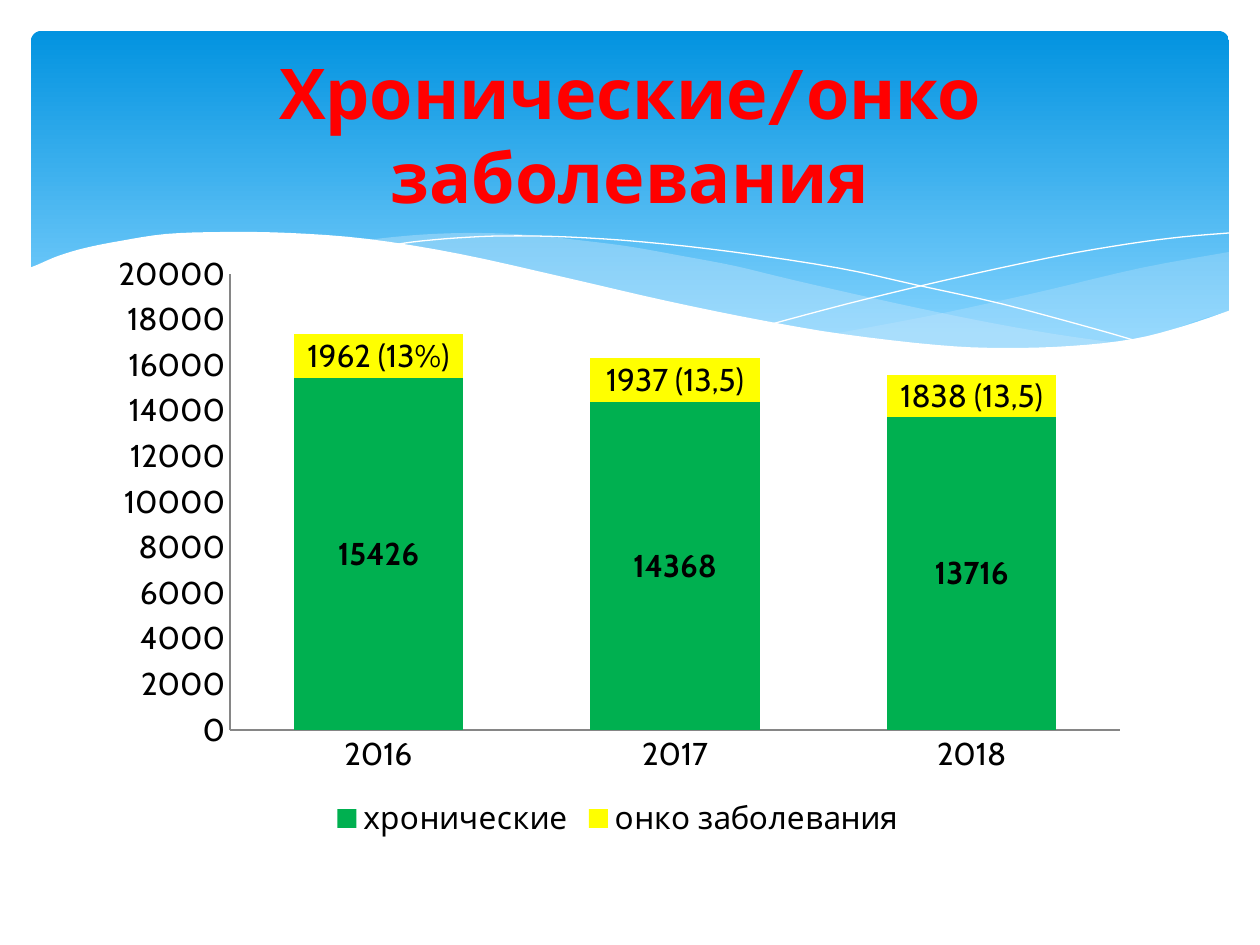
from lxml.etree import SubElement
from pptx import Presentation
from pptx.chart.data import CategoryChartData
from pptx.dml.color import RGBColor
from pptx.enum.chart import XL_CHART_TYPE as ChartType, XL_LABEL_POSITION as LabelPos
from pptx.enum.chart import XL_LEGEND_POSITION as LegendPos, XL_TICK_MARK as Tick
from pptx.enum.shapes import MSO_SHAPE as Shape
from pptx.enum.text import MSO_ANCHOR as Anchor, PP_ALIGN as Align
from pptx.oxml.ns import qn
from pptx.util import Pt

PX = 914400 / 126
FONT = "Cabin"

RIGHT_WAVE = [
    [(1229, 252), (1141, 268), (1048, 290), (981, 305), (919, 318), (833, 334)],
    [(833, 334), (906, 342), (969, 348), (1026, 350), (1076, 348), (1120, 343),
     (1160, 334), (1196, 321), (1229, 311)],
]
LONG_WAVE = [
    [(1125, 344), (1054, 334), (976, 320), (890, 302), (793, 280), (735, 266),
     (682, 256), (632, 247), (586, 241), (529, 235), (479, 233), (433, 234),
     (394, 237), (360, 241)],
    [(360, 241), (431, 251), (509, 266), (566, 280), (668, 302), (757, 321),
     (838, 335), (910, 345), (974, 350), (1031, 350), (1080, 348), (1125, 344)],
]
FALLING_LINE = [
    [(389, 246), (413, 242), (457, 238), (505, 236), (567, 237), (643, 242),
     (733, 252), (838, 268), (916, 285), (1002, 304), (1095, 329), (1143, 343)],
]
RISING_LINE = [
    [(772, 324), (847, 304), (942, 281), (1053, 257), (1128, 244), (1182, 237),
     (1229, 233)],
]
WHITE_WAVE = [
    [(1231, 310), (1184, 326), (1133, 339), (1071, 346), (1002, 348), (937, 345),
     (842, 334), (760, 320), (667, 301), (563, 277), (460, 254), (368, 239),
     (290, 233), (223, 232), (166, 234), (120, 241), (85, 248), (58, 256),
     (37, 265), (29, 268)],
    [(29, 415), (1231, 415)],
]


def emu(*lengths):
    """Turn px lengths into EMU."""
    return [round(length * PX) for length in lengths]


def color(hex_value):
    """Turn a hex string into a colour."""
    return RGBColor.from_string(hex_value)


def style_font(font, hex_value="000000", **formats):
    """Apply the shared font and any format values."""
    for name, value in {"name": FONT, "size": Pt(18), "bold": False, **formats}.items():
        setattr(font, name, value)
    font.color.rgb = color(hex_value)


def smooth_curve(knots, steps=4):
    """Return points of a Catmull-Rom curve through the knots."""
    ends = [knots[0], *knots, knots[-1]]
    points = [knots[0]]
    for a, b, c, d in zip(ends, ends[1:], ends[2:], ends[3:]):
        for step in range(1, steps + 1):
            t = step / steps
            points.append(tuple(
                (2 * q + (r - p) * t + (2 * p - 5 * q + 4 * r - s) * t ** 2
                 + (3 * q - p - 3 * r + s) * t ** 3) / 2
                for p, q, r, s in zip(a, b, c, d)))
    return points


def add_wave(slide, origin, edges, fill=None, alpha=100):
    """Draw a filled wave, or an open white line when there is no fill."""
    left, top = origin
    points = [emu(left + x, top + y) for edge in edges for x, y in smooth_curve(edge)]
    builder = slide.shapes.build_freeform(*points[0])
    builder.add_line_segments(points[1:], close=fill is not None)
    wave = builder.convert_to_shape()
    wave.shadow.inherit = False
    if fill is None:
        wave.fill.background()
        wave.line.color.rgb = color("FFFFFF")
        wave.line.width = 0
        return
    wave.line.fill.background()
    wave.fill.solid()
    wave.fill.fore_color.rgb = color(fill)
    if alpha < 100:
        tone = wave.fill._xPr.find(".//" + qn("a:srgbClr"))
        SubElement(tone, qn("a:alpha")).set("val", str(alpha * 1000))


def add_banner(slide, box):
    """Place the blue panel and its waves."""
    left, top, width, height = box
    panel = slide.shapes.add_shape(
        Shape.ROUNDED_RECTANGLE, *emu(left + 31, top + 31, width - 62, height - 75))
    panel.adjustments[0] = 0.03
    panel.shadow.inherit = False
    panel.line.fill.background()
    panel.fill.gradient()
    panel.fill.gradient_angle = 270
    for stop, (position, tone) in zip(panel.fill.gradient_stops,
                                      [(0, "0293E0"), (0.9, "83D3FE")]):
        stop.position = position
        stop.color.rgb = color(tone)
    origin = left, top
    add_wave(slide, origin, RIGHT_WAVE, "C6E7FC", 29)
    add_wave(slide, origin, LONG_WAVE, "C6E7FC", 40)
    add_wave(slide, origin, FALLING_LINE)
    add_wave(slide, origin, RISING_LINE)
    add_wave(slide, origin, WHITE_WAVE, "FFFFFF")


def set_plot_layout(chart, **fractions):
    """Fix the inner plot area as fractions of the chart."""
    plot_area = chart._chartSpace.chart.plotArea
    layout = plot_area.find(qn("c:layout"))
    if layout is None:
        layout = SubElement(plot_area, qn("c:layout"))
        plot_area.insert(0, layout)
    manual = SubElement(layout, qn("c:manualLayout"))
    values = {"layoutTarget": "inner", "xMode": "edge", "yMode": "edge", **fractions}
    for name, value in values.items():
        SubElement(manual, qn(f"c:{name}")).set("val", str(value))


def add_disease_chart(slide, box):
    """Place the stacked columns of chronic and oncological diseases."""
    data = CategoryChartData()
    data.categories = ["2016", "2017", "2018"]
    data.add_series("хронические", [15426, 14368, 13716])
    data.add_series("онко заболевания", [1962, 1937, 1838])
    chart = slide.shapes.add_chart(ChartType.COLUMN_STACKED, *emu(*box), data).chart
    style_font(chart.font)
    chart.has_title = False
    chart.has_legend = True
    chart.legend.position = LegendPos.BOTTOM
    chart.legend.include_in_layout = False
    set_plot_layout(chart, x=0.13, y=0.05, w=0.85, h=0.76)

    for axis in (chart.category_axis, chart.value_axis):
        axis.major_tick_mark = axis.minor_tick_mark = Tick.NONE
        axis.has_major_gridlines = False
        axis.format.line.color.rgb = color("868686")
    for name, value in {"minimum_scale": 0, "maximum_scale": 20000,
                        "major_unit": 2000}.items():
        setattr(chart.value_axis, name, value)

    plot = chart.plots[0]
    for name, value in {"gap_width": 75, "overlap": 100, "vary_by_categories": False}.items():
        setattr(plot, name, value)
    chronic, oncology = plot.series
    for series, tone in ((chronic, "00B050"), (oncology, "FFFF00")):
        series.format.fill.solid()
        series.format.fill.fore_color.rgb = color(tone)
        series.data_labels.show_value = True
        series.data_labels.position = LabelPos.CENTER
        style_font(series.data_labels.font, bold=True)
    for index, wording in enumerate(["1962 (13%)", "1937 (13,5)", "1838 (13,5)"]):
        label = oncology.points[index].data_label
        label.text_frame.text = wording
        label.position = LabelPos.CENTER
        style_font(label.text_frame.paragraphs[0].runs[0].font)


def add_heading(slide, box):
    """Place the slide heading."""
    frame = slide.shapes.add_textbox(*emu(*box)).text_frame
    frame.word_wrap = True
    frame.vertical_anchor = Anchor.MIDDLE
    paragraph = frame.paragraphs[0]
    paragraph.alignment = Align.CENTER
    run = paragraph.add_run()
    run.text = "Хронические/онко заболевания"
    style_font(run.font, "FF0000", size=Pt(40), bold=True)


def main():
    """Build and save the slide."""
    deck = Presentation()
    deck.slide_width, deck.slide_height = emu(1260, 945)
    slide = deck.slides.add_slide(deck.slide_layouts[6])
    add_banner(slide, (0, 0, 1260, 415))
    add_disease_chart(slide, (94, 244, 1047, 600))
    add_heading(slide, (63, 47, 1134, 173))
    deck.save("out.pptx")


if __name__ == "__main__":
    main()
